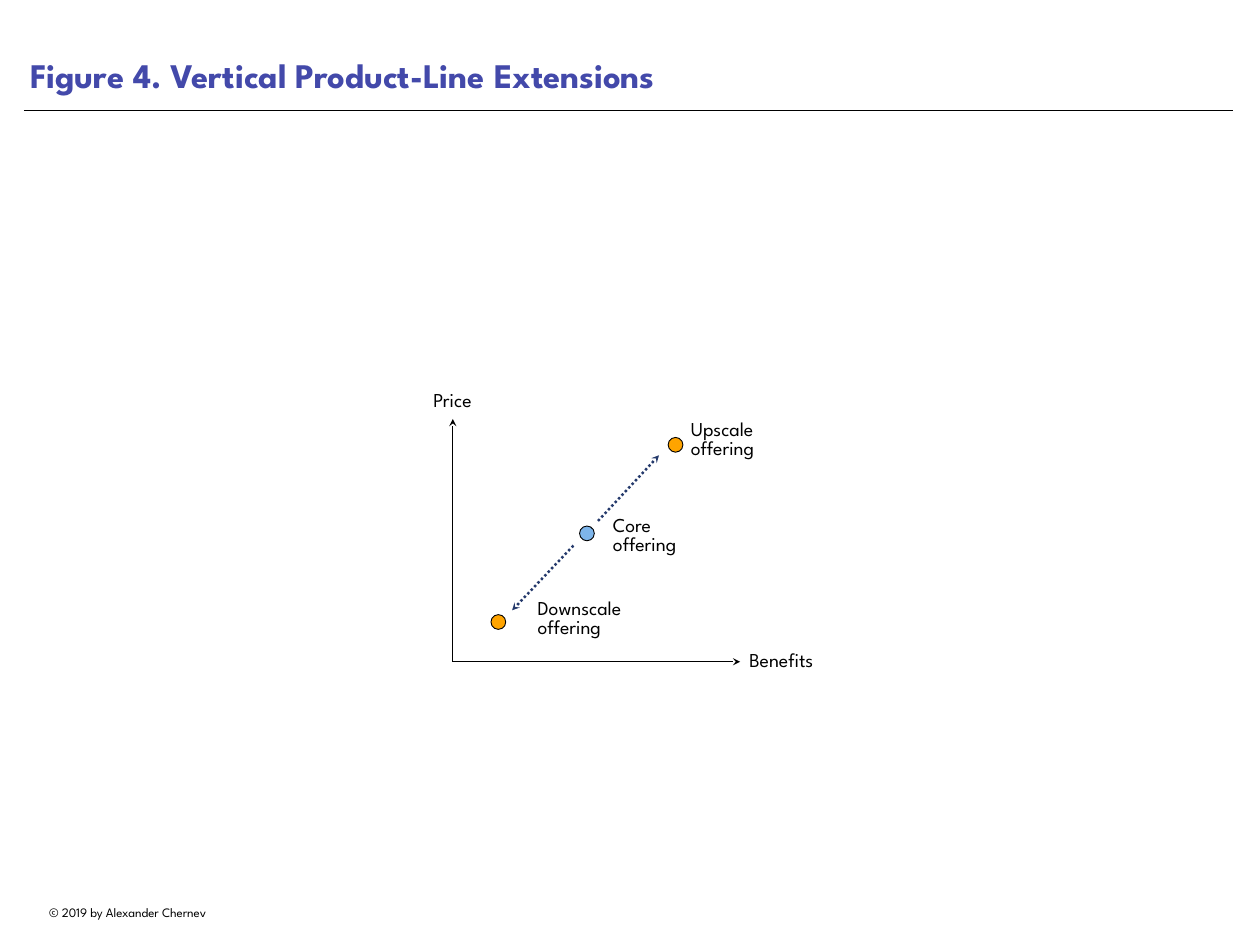
import pptx
import pptx.util
import pptx.dml.color
import pptx.enum.dml
import pptx.enum.shapes
import pptx.enum.text
import pptx.oxml.ns
from lxml import etree

Pt = pptx.util.Pt
ALIGN = pptx.enum.text.PP_ALIGN
ANCHOR = pptx.enum.text.MSO_ANCHOR

FONT = "League Spartan"
BLACK, TITLE_BLUE, ARROW_BLUE = "000000", "4349AA", "253A6C"
CORE_BLUE, EXTENSION_ORANGE = "7EB5EA", "FFA400"

SLIDE_SIZE = (1024, 768)
MARGIN, CONTENT_WIDTH = 19.5, 982.5
TITLE = "Figure 4. Vertical Product-Line Extensions"
FOOTER = "© 2019 by Alexander Chernev"

ORIGIN = (368, 537.8)
AXES = [  # name, arrow tip, label frame, alignment
    ("Price", (368, 340.5), (337.5, 315.5, 60.5, 22), ALIGN.CENTER),
    ("Benefits", (601.5, 537.8), (609, 526.5, 97, 21.5), ALIGN.LEFT),
]

CORE = (477, 433.5)
STEP, DOT = 72, 12
OFFERINGS = [  # label, steps up the line, colour, label frame
    ("Core\noffering", 0, CORE_BLUE, (498.2, 420.5, 132.5, 36.5)),
    ("Upscale\noffering", 1, EXTENSION_ORANGE, (561.5, 342.8, 97, 50)),
    ("Downscale\noffering", -1, EXTENSION_ORANGE, (437, 488, 132.5, 42)),
]
EXTENSION_ARROWS = [
    ((486, 423.4), (535.6, 370)),
    ((466, 443.4), (416.2, 496)),
]


def colour(hex_code):
    return pptx.dml.color.RGBColor.from_string(hex_code)


def add_text(page, text, frame, size=16, align=ALIGN.LEFT, hex_code=BLACK, bold=False,
             insets=(0, 0), spacing=None, anchor=ANCHOR.TOP, wrap=True):
    """Insets are (sides, top and bottom)."""
    box = page.shapes.add_textbox(*map(Pt, frame))
    body = box.text_frame
    body.word_wrap = wrap
    body.vertical_anchor = anchor
    body.margin_left = body.margin_right = Pt(insets[0])
    body.margin_top = body.margin_bottom = Pt(insets[1])
    body.text = text
    for para in body.paragraphs:
        para.alignment = align
        para.line_spacing = spacing
        for span in para.runs:
            span.font.name = FONT
            span.font.size = Pt(size)
            span.font.bold = bold
            span.font.color.rgb = colour(hex_code)
    return box


def add_line(page, start, end, width, hex_code=BLACK, dotted=False, arrow=True):
    line = page.shapes.add_connector(
        pptx.enum.shapes.MSO_CONNECTOR.STRAIGHT, *map(Pt, start + end))
    line.line.width = Pt(width)
    line.line.color.rgb = colour(hex_code)
    if dotted:
        line.line.dash_style = pptx.enum.dml.MSO_LINE.ROUND_DOT
    qn = pptx.oxml.ns.qn
    properties = line._element.spPr
    if arrow:
        etree.SubElement(properties.find(qn("a:ln")), qn("a:tailEnd"), type="stealth")
    etree.SubElement(properties, qn("a:effectLst"))


def add_dot(page, centre, hex_code):
    left, top = (position - DOT / 2 for position in centre)
    dot = page.shapes.add_shape(
        pptx.enum.shapes.MSO_SHAPE.OVAL, Pt(left), Pt(top), Pt(DOT), Pt(DOT))
    dot.shadow.inherit = False
    dot.fill.solid()
    dot.fill.fore_color.rgb = colour(hex_code)
    dot.line.color.rgb = colour(BLACK)
    dot.line.width = Pt(0.75)


def main():
    deck = pptx.Presentation()
    deck.slide_width, deck.slide_height = map(Pt, SLIDE_SIZE)
    page = deck.slides.add_slide(deck.slide_layouts[6])

    footer = add_text(page, FOOTER, (MARGIN, 731.5, 168.5, 20), 10.5, ALIGN.CENTER,
                      insets=(7.2, 3.6), wrap=False)
    footer.text_frame.auto_size = pptx.enum.text.MSO_AUTO_SIZE.SHAPE_TO_FIT_TEXT
    add_line(page, (MARGIN, 89.3), (MARGIN + CONTENT_WIDTH, 89.3), 0.5, arrow=False)
    add_text(page, TITLE, (MARGIN, 0, CONTENT_WIDTH, 82.8), 28, hex_code=TITLE_BLUE,
             bold=True, insets=(5, 5), anchor=ANCHOR.BOTTOM)

    for name, tip, frame, align in AXES:
        add_line(page, ORIGIN, tip, 1)
        add_text(page, name, frame, align=align)

    for label, steps, hex_code, frame in OFFERINGS:
        add_dot(page, (CORE[0] + steps * STEP, CORE[1] - steps * STEP), hex_code)
        add_text(page, label, frame, spacing=0.8)

    for start, end in EXTENSION_ARROWS:
        add_line(page, start, end, 2, ARROW_BLUE, dotted=True)

    deck.save("out.pptx")


if __name__ == "__main__":
    main()
